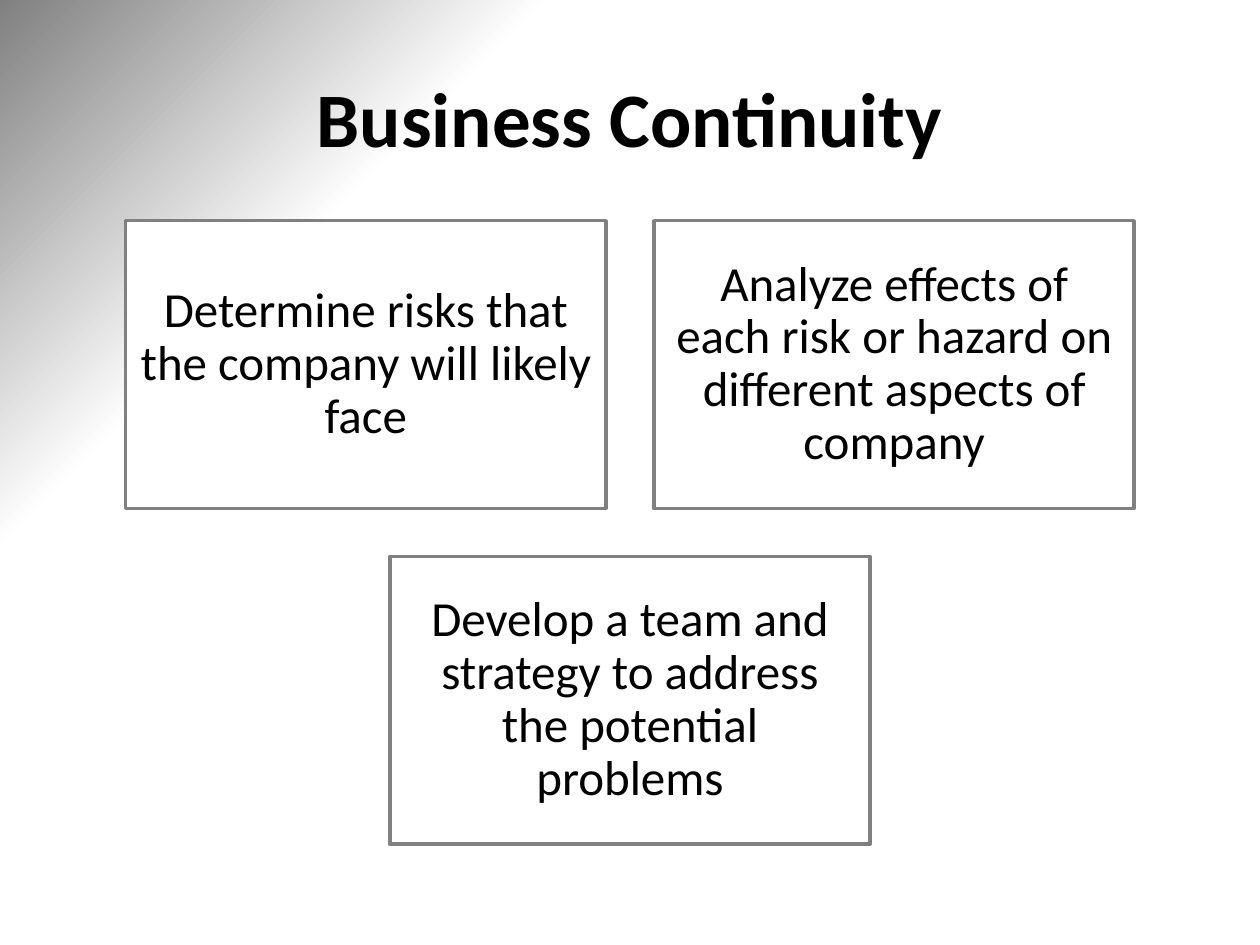
from pptx import Presentation
from pptx import oxml
from pptx.dml.color import RGBColor
from pptx.enum import shapes, text
from pptx.oxml import ns
from pptx.util import Cm, Pt

BLACK = RGBColor(0x00, 0x00, 0x00)
GREY = RGBColor(0x80, 0x80, 0x80)
WHITE = RGBColor(0xFF, 0xFF, 0xFF)
FONT = "Calibri"

WIDTH, HEIGHT = 25.4, 19.05
BOX_W, BOX_H = 9.68, 5.8
GAP = 0.97
TOP = 4.45
ROWS = [
    [
        "Determine risks that the company will likely face",
        "Analyze effects of each risk or hazard on different aspects of company",
    ],
    ["Develop a team and strategy to address the potential problems"],
]


def paint_back(slide):
    """Shade the background from white to a grey top left corner."""
    slide.background.fill.solid()
    props = slide.element.find(".//" + ns.qn("p:bgPr"))
    grad = oxml.parse_xml(
        f'<a:gradFill {ns.nsdecls("a")} rotWithShape="1"><a:gsLst>'
        f'<a:gs pos="75000"><a:srgbClr val="{WHITE}"/></a:gs>'
        f'<a:gs pos="100000"><a:srgbClr val="{GREY}"/></a:gs></a:gsLst>'
        '<a:path path="circle"><a:fillToRect l="100000" t="100000"/></a:path>'
        '<a:tileRect r="-100000" b="-100000"/></a:gradFill>'
    )
    props.replace(props.find(ns.qn("a:solidFill")), grad)


def put_text(shape, words, size, bold=False, spacing=None, inset=None):
    frame = shape.text_frame
    frame.word_wrap = True
    frame.vertical_anchor = text.MSO_ANCHOR.MIDDLE
    if inset is not None:
        frame.margin_left = frame.margin_right = Cm(inset)
        frame.margin_top = frame.margin_bottom = Cm(inset)
    para = frame.paragraphs[0]
    para.alignment = text.PP_ALIGN.CENTER
    if spacing is not None:
        para.line_spacing = spacing
    run = para.add_run()
    run.text = words
    font = run.font
    font.name, font.size, font.bold = FONT, Pt(size), bold
    font.color.rgb = BLACK


def add_title(slide, words):
    title = slide.shapes.title
    title.left, title.top = Cm(1.27), Cm(0.76)
    title.width, title.height = Cm(WIDTH - 2 * 1.27), Cm(3.18)
    put_text(title, words, 44, bold=True)


def add_box(slide, left, top, words):
    box = slide.shapes.add_shape(
        shapes.MSO_SHAPE.RECTANGLE, Cm(left), Cm(top), Cm(BOX_W), Cm(BOX_H)
    )
    box.shadow.inherit = False
    box.fill.solid()
    box.fill.fore_color.rgb = WHITE
    box.line.color.rgb = GREY
    box.line.width = Pt(2)
    put_text(box, words, 28, spacing=0.9, inset=0.3)


def add_rows(slide):
    """Lay out the boxes with equal gaps, each row centred on the slide."""
    for row, items in enumerate(ROWS):
        span = len(items) * (BOX_W + GAP) - GAP
        for col, words in enumerate(items):
            left = (WIDTH - span) / 2 + col * (BOX_W + GAP)
            add_box(slide, left, TOP + row * (BOX_H + GAP), words)


def main():
    deck = Presentation()
    deck.slide_width, deck.slide_height = Cm(WIDTH), Cm(HEIGHT)
    slide = deck.slides.add_slide(deck.slide_layouts[5])
    paint_back(slide)
    add_title(slide, "Business Continuity")
    add_rows(slide)
    deck.save("out.pptx")


if __name__ == "__main__":
    main()
